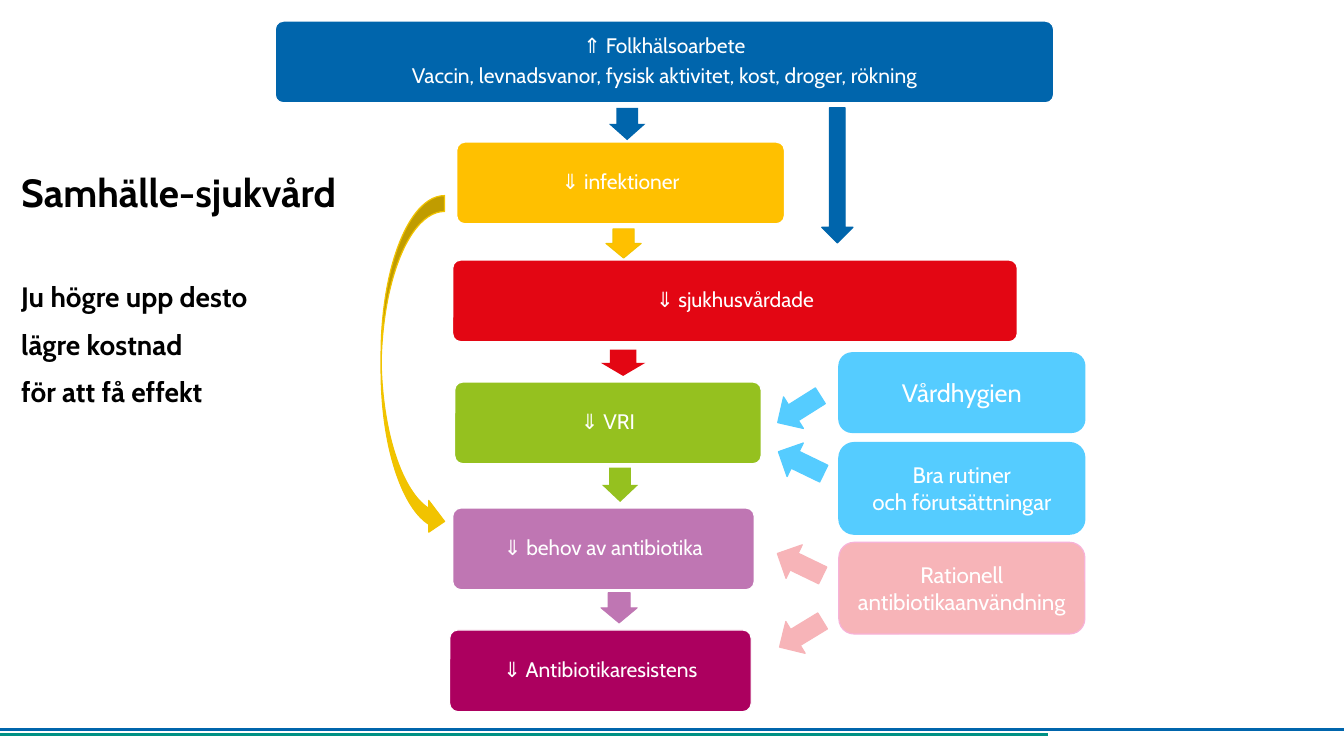
from dataclasses import dataclass

from lxml import etree
from pptx import Presentation
from pptx.dml.color import RGBColor
from pptx.enum.shapes import MSO_CONNECTOR, MSO_SHAPE
from pptx.enum.text import MSO_ANCHOR, MSO_AUTO_SIZE, PP_ALIGN
from pptx.oxml.ns import qn
from pptx.util import Pt

ROUND = MSO_SHAPE.ROUNDED_RECTANGLE
RIGHT = MSO_SHAPE.RIGHT_ARROW
DOWN = MSO_SHAPE.DOWN_ARROW
CURVE = MSO_SHAPE.CURVED_RIGHT_ARROW
STRAIGHT = MSO_CONNECTOR.STRAIGHT
MIDDLE, BOTTOM = MSO_ANCHOR.MIDDLE, MSO_ANCHOR.BOTTOM
LEFT, CENTER = PP_ALIGN.LEFT, PP_ALIGN.CENTER
NO_FIT = MSO_AUTO_SIZE.NONE

SCALE = 9144
WIDE, HIGH = 1333, 750


@dataclass(frozen=True)
class Theme:
    font: str = "Cabin"
    black: str = "000000"
    white: str = "FFFFFF"
    blue: str = "0065AC"
    teal: str = "009185"
    amber: str = "FFC000"
    gold: str = "F1C300"
    red: str = "E30613"
    green: str = "95C11F"
    mauve: str = "BF76B3"
    plum: str = "AC005F"
    sky: str = "55CCFF"
    rose: str = "F7B4B8"
    pink: str = "F7B2D8"
    head: int = 28
    lead: int = 20
    step: int = 15
    large: int = 18
    note: int = 16
    edge: float = 0.85
    thin: float = 0.75
    rule: int = 2


T = Theme()


def px(n):
    return round(n * SCALE)


def rgb(code):
    return RGBColor.from_string(code)


def write(frame, text, size, color=T.white, bold=False, align=CENTER,
          lead=None, before=0, after=0, first=True):
    for i, line in enumerate(text.split("\n")):
        para = frame.paragraphs[0] if first and i == 0 else frame.add_paragraph()
        para.text = line
        para.alignment = align
        para.line_spacing = lead
        para.space_before = Pt(before)
        para.space_after = Pt(after)
        for run in para.runs:
            run.font.name = T.font
            run.font.size = Pt(size)
            run.font.bold = bold
            run.font.color.rgb = rgb(color)


def inset(frame, gap):
    frame.margin_left = frame.margin_right = px(gap)
    frame.margin_top = frame.margin_bottom = px(gap)


def draw(slide, kind, box, fill, line=None, width=T.edge, turn=0, adjust=()):
    shape = slide.shapes.add_shape(kind, *map(px, box))
    shape.shadow.inherit = False
    shape.rotation = turn
    for i, value in enumerate(adjust):
        shape.adjustments[i] = value
    shape.fill.solid()
    shape.fill.fore_color.rgb = rgb(fill)
    if line:
        shape.line.color.rgb = rgb(line)
        shape.line.width = Pt(width)
    else:
        shape.line.fill.background()
    return shape


def label(shape, text, size, gap=None, **form):
    frame = shape.text_frame
    frame.word_wrap = True
    frame.vertical_anchor = MIDDLE
    if gap is not None:
        inset(frame, gap)
    write(frame, text, size, **form)


def footer(slide, box):
    x, y, w, h = box
    for right, top, color in ((w, 0, T.blue), (1039, h, T.teal)):
        line = slide.shapes.add_connector(
            STRAIGHT, px(x), px(y + top), px(x + right), px(y + top))
        line.line.color.rgb = rgb(color)
        line.line.width = Pt(T.rule)
        etree.SubElement(line.element.spPr, qn("a:effectLst"))


def heading(slide, box):
    title = slide.shapes.title
    title.left, title.top, title.width, title.height = map(px, box)
    frame = title.text_frame
    frame.auto_size = NO_FIT
    frame.word_wrap = True
    frame.vertical_anchor = BOTTOM
    inset(frame, 0)
    form = dict(color=T.black, bold=True, align=LEFT, lead=Pt(34))
    write(frame, "Samhälle-sjukvård", T.head, **form)
    write(frame, "Ju högre upp desto\vlägre kostnad\vför att få effekt",
          T.lead, before=36, first=False, **form)


def cascade(slide, box):
    x, y, w, h = box
    bars = (
        (0, 0, w, T.blue, "⇑ Folkhälsoarbete\n"
         "Vaccin, levnadsvanor, fysisk aktivitet, kost, droger, rökning"),
        (180, 120, 325, T.amber, "⇓ infektioner"),
        (176, 237, 560, T.red, "⇓ sjukhusvårdade"),
        (178, 358, 304, T.green, "⇓ VRI"),
        (176, 483, 299, T.mauve, "⇓ behov av antibiotika"),
        (173, 604, 299, T.plum, "⇓ Antibiotikaresistens"),
    )
    for left, top, wide, color, text in bars:
        bar = draw(slide, ROUND, (x + left, y + top, wide, 81), color,
                   T.white, adjust=(0.1,))
        label(bar, text, T.step, gap=8, lead=0.9, after=5)

    arrows = (
        (333, 84, 32, 36, T.blue, None),
        (331, 203, 29, 35, T.amber, T.gold),
        (332, 317, 26, 44, T.red, None),
        (325, 442, 34, 36, T.green, None),
        (326, 564, 30, 36, T.mauve, T.mauve),
    )
    for left, top, wide, high, color, line in arrows:
        draw(slide, RIGHT, (x + left, y + top, wide, high), color, line,
             width=T.thin, turn=90, adjust=(0.6, 0.5))

    draw(slide, DOWN, (x + 542, y + 86, 31, 134), T.blue, T.blue)
    draw(slide, CURVE, (x + 105, y + 173, 63, 339), T.gold, T.gold)


def measures(slide, box):
    x, y, w, h = box
    cards = (
        (0, 79, T.sky, T.sky, T.large, "Vårdhygien"),
        (89, 91, T.sky, T.sky, T.note, "Bra rutiner\noch förutsättningar"),
        (188, 91, T.rose, T.pink, T.note, "Rationell antibiotikaanvändning"),
    )
    for top, high, fill, line, size, text in cards:
        card = draw(slide, ROUND, (x + w - 244, y + top, 244, high), fill, line)
        label(card, text, size)

    arrows = (
        (0, 31, 57.8, T.sky),
        (2, 84, 115.8, T.sky),
        (1, 185, 115.8, T.rose),
        (2, 254, 58.7, T.rose),
    )
    for left, top, turn, color in arrows:
        draw(slide, DOWN, (x + left, y + top, 37, 50), color, color, turn=turn)


def main():
    deck = Presentation()
    deck.slide_width, deck.slide_height = px(WIDE), px(HIGH)
    slide = deck.slides.add_slide(deck.slide_layouts.get_by_name("Title Only"))
    footer(slide, (0, 724, WIDE, 5))
    heading(slide, (21, 303, 1134, 102))
    cascade(slide, (273, 21, 772, 685))
    measures(slide, (774, 350, 302, 304))
    deck.save("out.pptx")


if __name__ == "__main__":
    main()
